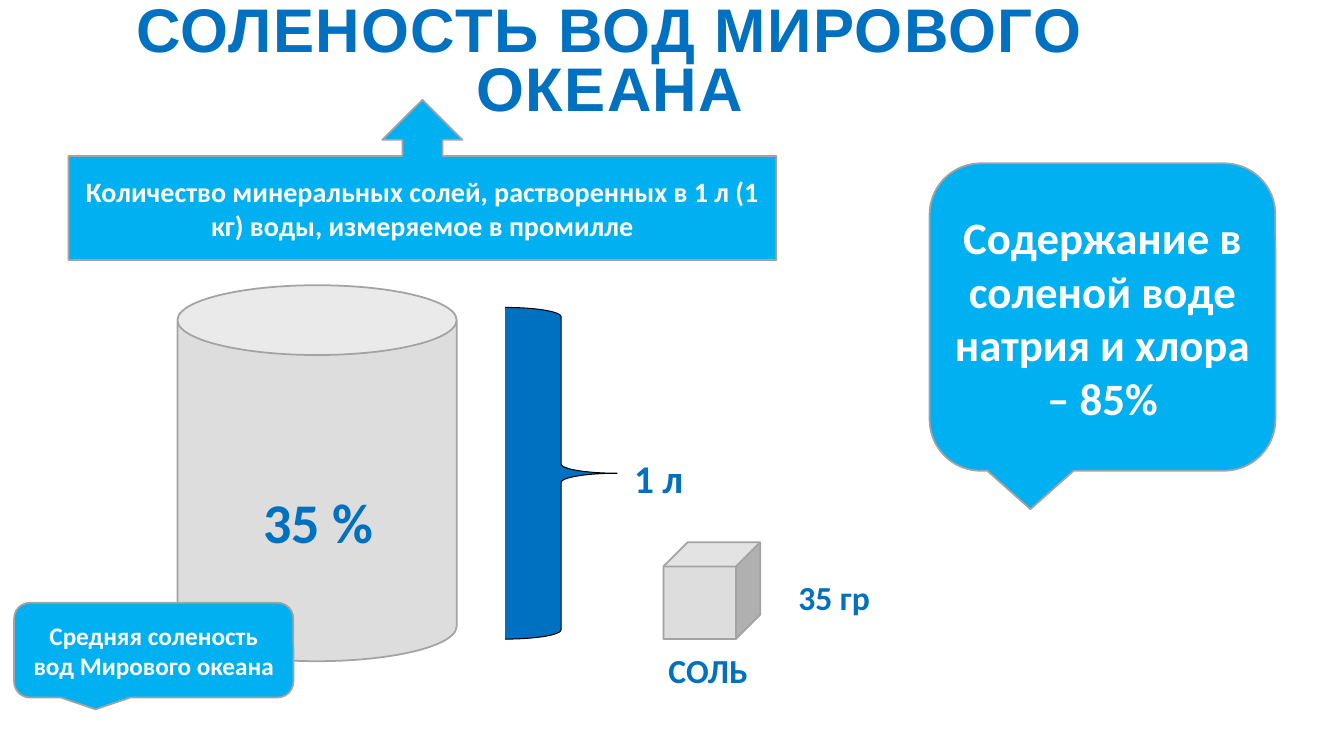
from dataclasses import dataclass

from pptx import Presentation
from pptx import util as u
from pptx.dml.color import RGBColor
from pptx.enum import shapes, text

KIND = shapes.MSO_SHAPE
CENTER = text.PP_ALIGN.CENTER
LEFT = text.PP_ALIGN.LEFT
TITLE_ONLY = 5


@dataclass(frozen=True)
class Theme:
    accent: str = "0070C0"
    callout: str = "00B0F0"
    solid: str = "DDDDDD"
    outline: str = "A3A3A3"
    brace_outline: str = "000000"
    on_callout: str = "FFFFFF"
    heading: str = "Arial"
    body: str = "Calibri"
    title: int = 44
    percent: int = 40
    fact: int = 32
    volume: int = 28
    salt: int = 24
    definition: int = 20
    note: int = 18


THEME = Theme()


def place(sp, box):
    for name, value in zip(("left", "top", "width", "height"), box):
        setattr(sp, name, u.Inches(value))


def write(sp, words, size, color, font=THEME.body, align=CENTER,
          anchor=text.MSO_ANCHOR.MIDDLE, fit=text.MSO_AUTO_SIZE.NONE):
    """Fill a shape with one bold paragraph and return that paragraph."""
    tf = sp.text_frame
    frame = {"word_wrap": True, "auto_size": fit, "vertical_anchor": anchor}
    for name, value in frame.items():
        setattr(tf, name, value)
    p = tf.paragraphs[0]
    p.alignment = align
    r = p.add_run()
    r.text = words
    for name, value in {"name": font, "size": u.Pt(size), "bold": True}.items():
        setattr(r.font, name, value)
    r.font.color.rgb = RGBColor.from_string(color)
    return p


def add_title(s, words, box):
    sp = s.shapes.title
    place(sp, box)
    p = write(sp, words, THEME.title, THEME.accent, THEME.heading)
    p.line_spacing = 0.8
    p.runs[0].font._element.set("spc", "100")


def add_figure(s, kind, box, fill, outline=THEME.outline, weight=1.25):
    sp = s.shapes.add_shape(kind, *map(u.Inches, box))
    sp.shadow.inherit = False
    sp.fill.solid()
    sp.fill.fore_color.rgb = RGBColor.from_string(fill)
    sp.line.color.rgb = RGBColor.from_string(outline)
    sp.line.width = u.Pt(weight)
    return sp


def add_callout(s, kind, box, words, size):
    sp = add_figure(s, kind, box, THEME.callout)
    write(sp, words, size, THEME.on_callout)


def add_label(s, box, words, size, align=LEFT):
    sp = s.shapes.add_textbox(*map(u.Inches, box))
    write(sp, words, size, THEME.accent, align=align,
          anchor=text.MSO_ANCHOR.TOP, fit=text.MSO_AUTO_SIZE.SHAPE_TO_FIT_TEXT)


def main():
    prs = Presentation()
    prs.slide_width, prs.slide_height = u.Inches(13.33), u.Inches(7.5)
    s = prs.slides.add_slide(prs.slide_layouts[TITLE_ONLY])

    add_title(s, "СОЛЕНОСТЬ ВОД МИРОВОГО ОКЕАНА", (0.35, 0.17, 11.4, 0.94))

    add_figure(s, KIND.CAN, (1.76, 2.83, 2.77, 3.73), THEME.solid)
    add_label(s, (2.49, 4.79, 1.34, 0.77), "35 %", THEME.percent, CENTER)
    add_callout(s, KIND.ROUNDED_RECTANGULAR_CALLOUT, (0.14, 5.98, 2.77, 0.94),
                "Средняя соленость вод Мирового океана", THEME.note)
    add_callout(s, KIND.UP_ARROW_CALLOUT, (0.68, 0.99, 7.02, 1.59),
                "Количество минеральных солей, растворенных в 1 л (1 кг) воды, "
                "измеряемое в промилле", THEME.definition)

    add_figure(s, KIND.RIGHT_BRACE, (5.01, 3.05, 1.11, 3.29), THEME.accent,
               THEME.brace_outline, 0.75)
    add_label(s, (6.19, 4.46, 0.87, 0.57), "1 л", THEME.volume)

    add_figure(s, KIND.CUBE, (6.58, 5.38, 0.96, 0.96), THEME.solid)
    add_label(s, (7.82, 5.67, 0.96, 0.5), "35 гр", THEME.salt)
    add_label(s, (6.53, 6.4, 1.62, 0.5), "СОЛЬ", THEME.salt)

    add_callout(s, KIND.ROUNDED_RECTANGULAR_CALLOUT, (9.22, 1.62, 3.43, 3.05),
                "Содержание в соленой воде натрия и хлора – 85%", THEME.fact)

    prs.save("out.pptx")


if __name__ == "__main__":
    main()
